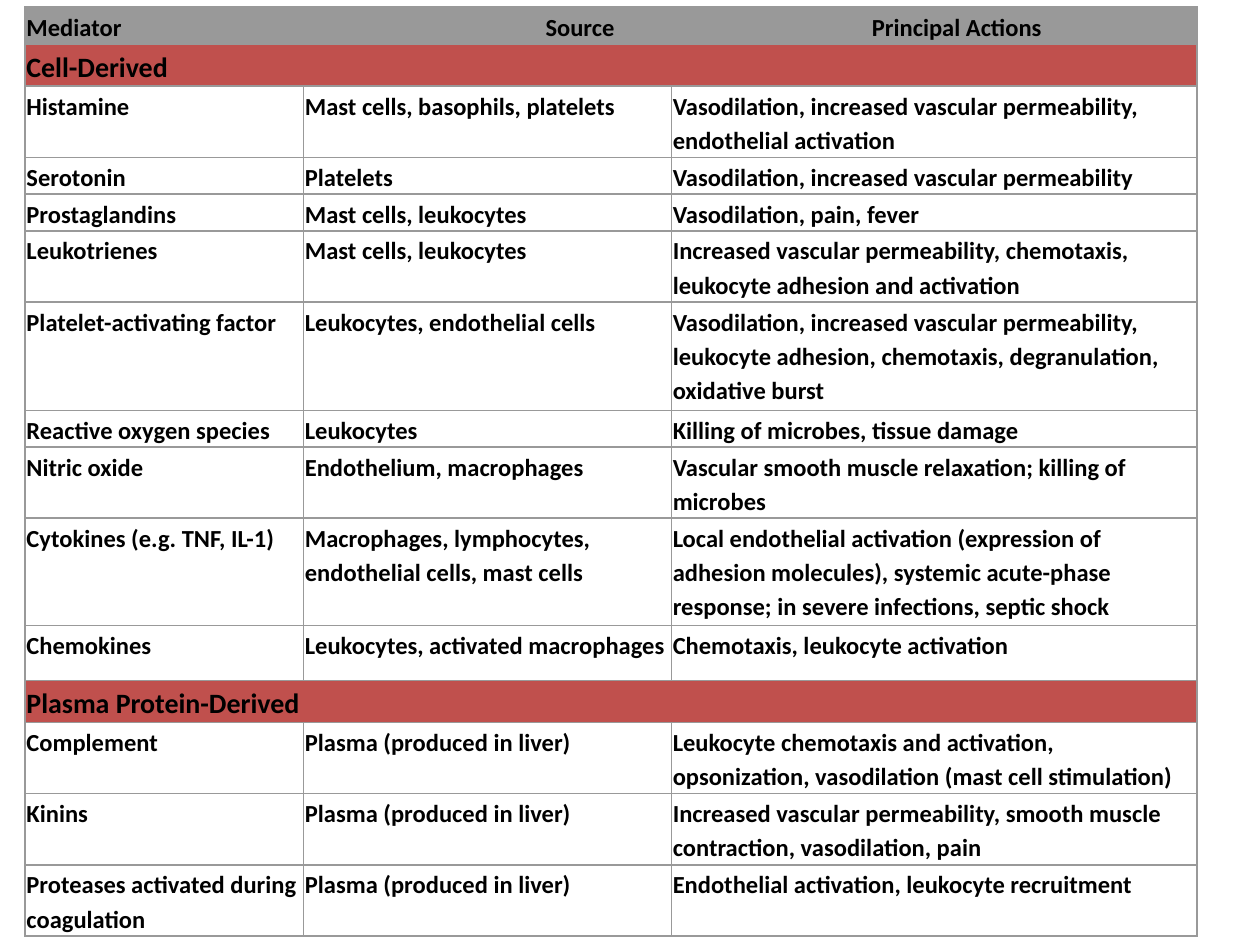
from lxml import etree
from pptx import Presentation, util as u
from pptx.dml.color import RGBColor
from pptx.enum import text
from pptx.oxml.ns import qn

BLACK = RGBColor(0, 0, 0)
WHITE = RGBColor(255, 255, 255)
GREY = RGBColor(0x99, 0x99, 0x99)
RED = RGBColor(0xC0, 0x50, 0x4D)

COLS = [221, 191, 101, 158, 259]
HEADER = ["Mediator", "Source", "Principal Actions"]
LIVER = "Plasma (produced in liver)"
GROUPS = [
    ("Cell-Derived", 23, [
        (46, "Histamine", "Mast cells, basophils, platelets",
         "Vasodilation, increased vascular permeability, endothelial activation"),
        (27, "Serotonin", "Platelets", "Vasodilation, increased vascular permeability"),
        (23, "Prostaglandins", "Mast cells, leukocytes", "Vasodilation, pain, fever"),
        (51, "Leukotrienes", "Mast cells, leukocytes",
         "Increased vascular permeability, chemotaxis, leukocyte adhesion and activation"),
        (86, "Platelet-activating factor", "Leukocytes, endothelial cells",
         "Vasodilation, increased vascular permeability, leukocyte adhesion, "
         "chemotaxis, degranulation, oxidative burst"),
        (25, "Reactive oxygen species", "Leukocytes", "Killing of microbes, tissue damage"),
        (44, "Nitric oxide", "Endothelium, macrophages",
         "Vascular smooth muscle relaxation; killing of microbes"),
        (85, "Cytokines (e.g. TNF, IL-1)",
         "Macrophages, lymphocytes, endothelial cells, mast cells",
         "Local endothelial activation (expression of adhesion molecules), systemic "
         "acute-phase response; in severe infections, septic shock"),
        (44, "Chemokines", "Leukocytes, activated macrophages",
         "Chemotaxis, leukocyte activation"),
    ]),
    ("Plasma Protein-Derived", 23, [
        (56, "Complement", LIVER,
         "Leukocyte chemotaxis and activation, opsonization, vasodilation "
         "(mast cell stimulation)"),
        (50, "Kinins", LIVER,
         "Increased vascular permeability, smooth muscle contraction, vasodilation, pain"),
        (44, "Proteases activated during coagulation", LIVER,
         "Endothelial activation, leukocyte recruitment"),
    ]),
]


def write(frame, words, size=14, color=BLACK, bold=True, font="Calibri"):
    par = frame.paragraphs[0]
    par.line_spacing = 1.15
    par.space_after = u.Pt(10)
    run = par.add_run()
    run.text = words
    run.font.size = u.Pt(size)
    run.font.name = font
    run.font.bold = bold
    run.font.color.rgb = color


class Deck:
    def __init__(self, wide=1000, high=750):
        self.prs = Presentation()
        self.prs.slide_width = u.Inches(10)
        self.prs.slide_height = u.Inches(7.5)
        self.unit = self.prs.slide_width // wide
        self.high = high
        self.slide = self.prs.slides.add_slide(self.prs.slide_layouts[6])

    def grid(self, left, top, cols, rows):
        area = [n * self.unit for n in (left, top, sum(cols), sum(rows))]
        table = self.slide.shapes.add_table(len(rows), len(cols), *area).table
        table.first_row = table.horz_banding = False
        for col, size in zip(table.columns, cols):
            col.width = size * self.unit
        for row, size in zip(table.rows, rows):
            row.height = size * self.unit
        return table

    def edge(self, cell, **widths):
        props = cell._tc.get_or_add_tcPr()
        for side in "LRTB":
            line = etree.SubElement(props, qn(f"a:ln{side}"),
                                    w=str(u.Pt(widths.get(side, 1))))
            fill = etree.SubElement(line, qn("a:solidFill"))
            etree.SubElement(fill, qn("a:srgbClr"), val=str(GREY))

    def row(self, table, index, words, spans, fill, size=14, head=False):
        start = 0
        last = len(table.columns) - 1
        for word, span in zip(words, spans):
            end = start + span - 1
            first = table.cell(index, start)
            if span > 1:
                first.merge(table.cell(index, end))
            for col in range(start, end + 1):
                cell = table.cell(index, col)
                outer = {"T": 1.5} if head else {}
                if head and col in (0, last):
                    outer["L" if col == 0 else "R"] = 1.5
                self.edge(cell, **outer)
                cell.fill.solid()
                cell.fill.fore_color.rgb = fill
                cell.margin_left = cell.margin_right = self.unit
                cell.margin_top = cell.margin_bottom = self.unit
            anchor = text.MSO_ANCHOR
            first.vertical_anchor = anchor.BOTTOM if head else anchor.TOP
            write(first.text_frame, word, size=size)
            start = end + 1


def main():
    deck = Deck()
    lines = [(22, HEADER, (2, 2, 1), dict(fill=GREY, head=True))]
    for name, high, items in GROUPS:
        lines.append((high, [name], (5,), dict(fill=RED, size=16)))
        lines += [(size, words, (1, 2, 2), dict(fill=WHITE))
                  for size, *words in items]
    table = deck.grid(20, 6, COLS, [line[0] for line in lines])
    for index, (_, words, spans, style) in enumerate(lines):
        deck.row(table, index, words, spans, **style)
    deck.prs.save("out.pptx")


if __name__ == "__main__":
    main()
